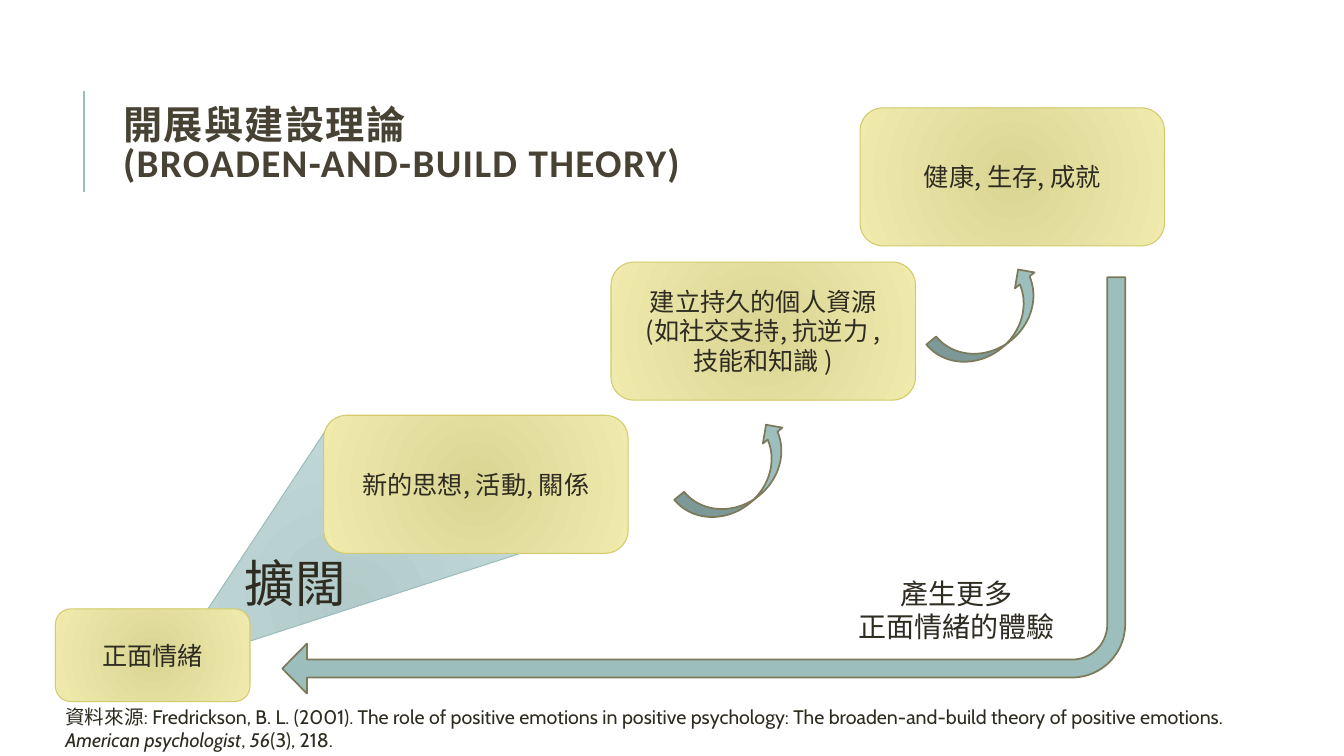
import pptx
import pptx.util
import pptx.dml.color
import pptx.enum.shapes
import pptx.enum.text
import pptx.oxml
import pptx.oxml.ns

Inches = pptx.util.Inches
Pt = pptx.util.Pt
SHAPE = pptx.enum.shapes.MSO_SHAPE
ALIGN = pptx.enum.text.PP_ALIGN
NAMESPACE = pptx.oxml.ns.nsdecls("a")
qn = pptx.oxml.ns.qn


def colour(value):
    return pptx.dml.color.RGBColor.from_string(value)


class TheorySlide:
    """Draws the elements of the broaden-and-build slide in one style."""

    HAN, LATIN, HEADING = "Noto Sans CJK SC", "Cabin", "Calibri"
    INK, HEADING_INK = "2E2B21", "474233"
    TEAL, OLIVE, GOLD = "9CBEBD", "7D7A5C", "D2CB6C"
    YELLOWS, TEALS = ("DBD594", "F0EAAD"), ("B2CBCA", "C6DEDE")

    def __init__(self, deck):
        self.slide = deck.slides.add_slide(deck.slide_layouts[5])
        self.shapes = self.slide.shapes

    def format_text(self, frame, size, align=ALIGN.LEFT, font=HAN, ink=INK, leading=1.18):
        frame.vertical_anchor = pptx.enum.text.MSO_ANCHOR.MIDDLE
        for paragraph in frame.paragraphs:
            paragraph.alignment = align
            paragraph.line_spacing = Pt(round(size * leading, 1))
            for run in paragraph.runs:
                run.font.size, run.font.name = Pt(size), font
                run.font.color.rgb = colour(ink)
                run.font._element.find(qn("a:latin")).addnext(pptx.oxml.parse_xml(
                    f'<a:ea {NAMESPACE} typeface="{self.HAN}"/>'))

    def title(self, text, left, top, width, height):
        heading = self.shapes.title
        heading.left, heading.top = Inches(left), Inches(top)
        heading.width, heading.height = Inches(width), Inches(height)
        heading.text_frame.auto_size = pptx.enum.text.MSO_AUTO_SIZE.NONE
        heading.text_frame.text = text
        self.format_text(heading.text_frame, 28, font=self.HEADING,
                         ink=self.HEADING_INK, leading=0.97)
        for run in heading.text_frame.paragraphs[0].runs:
            run.font.bold = True
            run.font._element.set("spc", "100")

    def rule(self, x, top, bottom):
        line = self.shapes.add_connector(
            pptx.enum.shapes.MSO_CONNECTOR.STRAIGHT,
            Inches(x), Inches(bottom), Inches(x), Inches(top))
        line.line.color.rgb, line.line.width = colour(self.TEAL), Pt(1.5)
        line._element.spPr.append(pptx.oxml.parse_xml(f'<a:effectLst {NAMESPACE}/>'))

    def outline(self, kind, left, top, width, height, edge, weight, rotation=0):
        figure = self.shapes.add_shape(
            kind, Inches(left), Inches(top), Inches(width), Inches(height))
        figure.shadow.inherit = False
        figure.line.color.rgb, figure.line.width = colour(edge), Pt(weight)
        figure.rotation = rotation
        return figure

    def glow(self, figure, inner, outer):
        gradient = pptx.oxml.parse_xml(
            f'<a:gradFill {NAMESPACE} rotWithShape="1"><a:gsLst>'
            f'<a:gs pos="0"><a:srgbClr val="{inner}"/></a:gs>'
            f'<a:gs pos="100000"><a:srgbClr val="{outer}"/></a:gs></a:gsLst>'
            '<a:path path="circle"><a:fillToRect l="100000" t="100000" '
            'r="100000" b="100000"/></a:path></a:gradFill>')
        figure._element.spPr.find(qn("a:prstGeom")).addnext(gradient)

    def fan(self, left, top, width, height, rotation):
        triangle = self.outline(SHAPE.RIGHT_TRIANGLE, left, top, width, height,
                                self.TEAL, 0.75, rotation)
        self.glow(triangle, *self.TEALS)

    def stage(self, text, left, top, width=3.02, height=1.37):
        box = self.outline(SHAPE.ROUNDED_RECTANGLE, left, top, width, height,
                           self.GOLD, 0.75)
        self.glow(box, *self.YELLOWS)
        box.text_frame.text = text
        self.format_text(box.text_frame, 18, ALIGN.CENTER)

    def arrow(self, kind, left, top, width, height, rotation, adjustments=()):
        arrow = self.outline(kind, left, top, width, height, self.OLIVE, 1.25, rotation)
        arrow.fill.solid()
        arrow.fill.fore_color.rgb = colour(self.TEAL)
        for index, value in enumerate(adjustments):
            arrow.adjustments[index] = value

    def text_area(self, left, top, width, height):
        frame = self.shapes.add_textbox(
            Inches(left), Inches(top), Inches(width), Inches(height)).text_frame
        frame.word_wrap = True
        return frame

    def label(self, text, left, top, width, height, size, align=ALIGN.LEFT):
        frame = self.text_area(left, top, width, height)
        frame.margin_left = frame.margin_right = 0
        frame.margin_top = frame.margin_bottom = 0
        frame.text = text
        self.format_text(frame, size, align)

    def citation(self, source, reference, left, top, width, height):
        frame = self.text_area(left, top, width, height)
        frame.text = source
        journal = frame.add_paragraph()
        for part, italic in reference:
            run = journal.add_run()
            run.text = part
            run.font.italic = italic
        self.format_text(frame, 14, font=self.LATIN)


def main():
    deck = pptx.Presentation()
    deck.slide_width, deck.slide_height = Inches(13.33), Inches(7.5)
    theory = TheorySlide(deck)
    theory.rule(0.83, 0.9, 1.9)
    theory.fan(2, 4.87, 2.93, 2.34, 123.4)
    theory.title("開展與建設理論\v(BROADEN-AND-BUILD THEORY)", 1.12, 0.64, 10.63, 1.64)
    theory.stage("正面情緒", 0.55, 6.04, 1.93, 0.92)
    theory.stage("新的思想, 活動, 關係", 3.21, 4.12)
    theory.stage("建立持久的個人資源\n(如社交支持, 抗逆力 ,\v技能和知識 )", 6.06, 2.6)
    theory.stage("健康, 生存, 成就", 8.53, 1.07)
    for left, top in ((6.7, 4.49), (9.2, 2.95)):
        theory.arrow(SHAPE.CURVED_UP_ARROW, left, top, 1.3, 0.5, 320.7)
    theory.arrow(SHAPE.BENT_ARROW, 2.8, 2.75, 8.36, 4.13, 180,
                 (0.043, 0.06, 0.059, 0.128))
    theory.label("擴闊", 2.43, 5.48, 1.17, 0.6, 36)
    theory.label("產生更多\n正面情緒的體驗", 8.46, 5.72, 2.05, 0.67, 20, ALIGN.CENTER)
    theory.citation(
        "資料來源: Fredrickson, B. L. (2001). The role of positive emotions in positive "
        "psychology: The broaden-and-build theory of positive emotions.",
        (("American psychologist", True), (", ", False), ("56", True), ("(3), 218.", False)),
        0.55, 6.96, 12.7, 0.54)
    deck.save("out.pptx")


if __name__ == "__main__":
    main()
